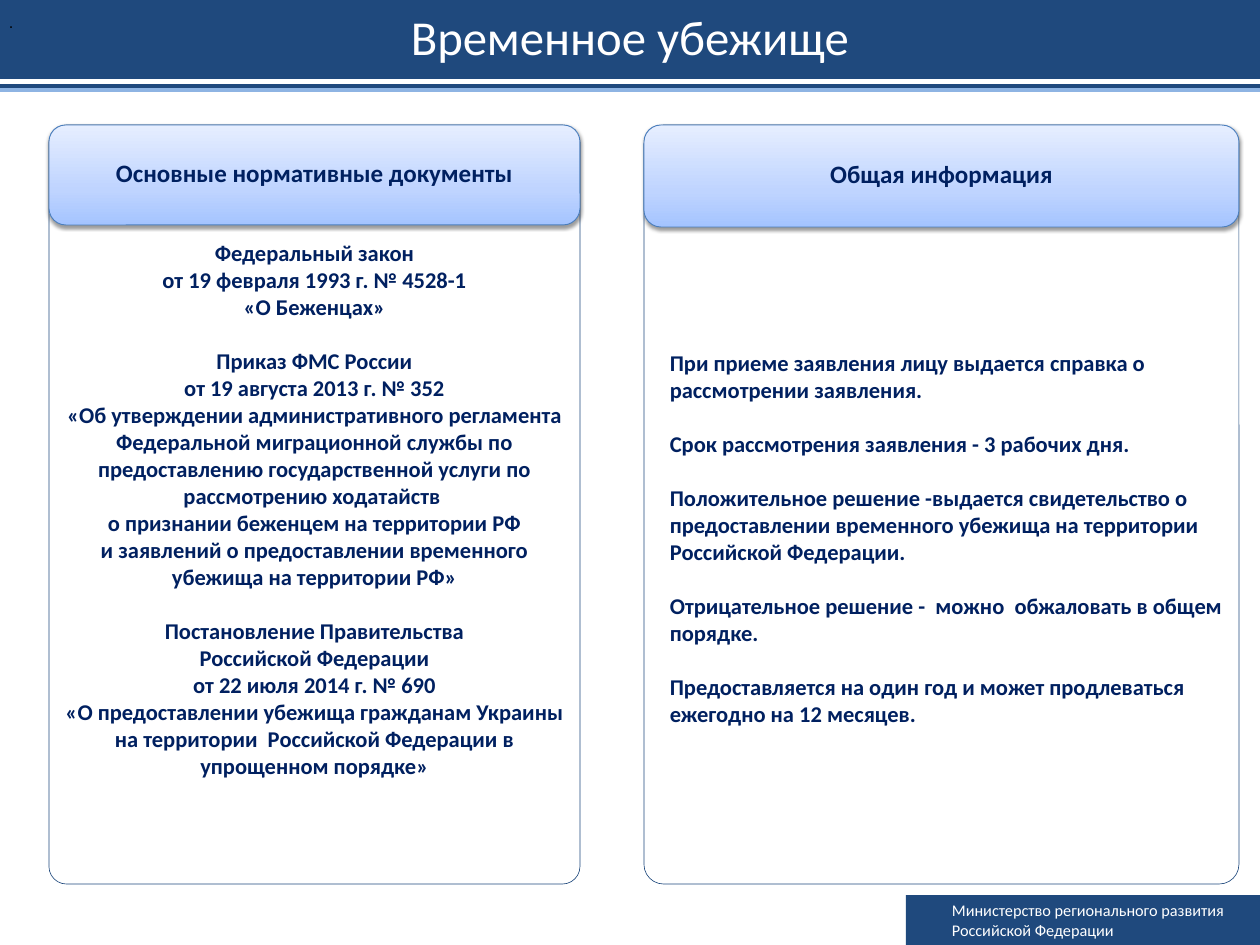
import copy

import lxml.etree
import pptx
import pptx.dml.color
import pptx.enum.shapes
import pptx.enum.text
import pptx.oxml
import pptx.oxml.ns
import pptx.util

RGBColor = pptx.dml.color.RGBColor
Pt = pptx.util.Pt
SHAPE = pptx.enum.shapes.MSO_SHAPE
ALIGN = pptx.enum.text.PP_ALIGN
ANCHOR = pptx.enum.text.MSO_ANCHOR
qn = pptx.oxml.ns.qn

PX = 914400 // 90
NAVY = RGBColor(0x1F, 0x49, 0x7D)
SKY = RGBColor(0x8E, 0xB4, 0xE3)
INK = RGBColor(0x00, 0x20, 0x60)
EDGE = RGBColor(0x4B, 0x7E, 0xBC)
WHITE = RGBColor(0xFF, 0xFF, 0xFF)
BLACK = RGBColor(0x00, 0x00, 0x00)
GRADIENT = [
    (0, RGBColor(0xA4, 0xC4, 0xFF)),
    (0.35, RGBColor(0xBF, 0xD4, 0xFF)),
    (1, RGBColor(0xE6, 0xEE, 0xFF)),
]

# Each group holds the paragraphs of one document
DOCUMENTS = [
    ["Федеральный закон", "от 19 февраля 1993 г. № 4528-1", "«О Беженцах»"],
    ["Приказ ФМС России", "от 19 августа 2013 г. № 352",
     "«Об утверждении административного регламента Федеральной миграционной "
     "службы по предоставлению государственной услуги по рассмотрению "
     "ходатайств \vо признании беженцем на территории РФ",
     "и заявлений о предоставлении временного убежища на территории РФ»"],
    ["Постановление Правительства", "Российской Федерации",
     "от 22 июля 2014 г. № 690",
     "«О предоставлении убежища гражданам Украины на территории  "
     "Российской Федерации в упрощенном порядке»"],
]
FACTS = [
    ["При приеме заявления лицу выдается справка о рассмотрении заявления."],
    ["Срок рассмотрения заявления - 3 рабочих дня."],
    ["Положительное решение -выдается свидетельство о предоставлении "
     "временного убежища на территории Российской Федерации."],
    ["Отрицательное решение -  можно  обжаловать в общем порядке."],
    ["Предоставляется на один год и может продлеваться ежегодно на 12 месяцев."],
]


def px(*lengths):
    return [length * PX for length in lengths]


def add_box(page, kind, place, fill=None, line=None, width=0.5, corner=None):
    box = page.shapes.add_shape(kind, *px(*place))
    box.shadow.inherit = False
    if corner is not None:
        box.adjustments[0] = corner
    if fill is None:
        box.fill.background()
    else:
        box.fill.solid()
        box.fill.fore_color.rgb = fill
    if line is None:
        box.line.fill.background()
    else:
        box.line.color.rgb = line
        box.line.width = Pt(width)
    return box


def add_rule(page, left, right, y, color):
    rule = page.shapes.add_connector(
        pptx.enum.shapes.MSO_CONNECTOR.STRAIGHT, *px(left, y, right, y))
    rule.line.color.rgb = color
    rule.line.width = Pt(3)
    lxml.etree.SubElement(rule._element.spPr, qn("a:effectLst"))


def write(box, groups, size, color, bold=False, align=ALIGN.LEFT,
          anchor=ANCHOR.MIDDLE, margins=(9, 4, 9, 4), spacing=None,
          font="Calibri", wrap=True):
    """Write groups of paragraphs, one empty line's height apart."""
    frame = box.text_frame
    frame.word_wrap = wrap
    frame.vertical_anchor = anchor
    (frame.margin_left, frame.margin_top,
     frame.margin_right, frame.margin_bottom) = px(*margins)
    frame.text = "\n".join(text for group in groups for text in group)
    paragraphs = iter(frame.paragraphs)
    for number, group in enumerate(groups):
        for place in range(len(group)):
            para = next(paragraphs)
            para.alignment = align
            if number and place == 0:
                para.space_before = Pt(size * 1.2)
            if spacing:
                para.line_spacing = Pt(spacing)
            for span in para.runs:
                span.font.name = font
                span.font.size = Pt(size)
                span.font.bold = bold
                span.font.color.rgb = color


def shade(box):
    """Give a heading its vertical gradient and soft shadow."""
    box.fill.gradient()
    box.fill.gradient_angle = 90
    stops = box._element.spPr.find(qn("a:gradFill")).find(qn("a:gsLst"))
    stops.insert(1, copy.deepcopy(stops[0]))
    for stop, (position, color) in zip(box.fill.gradient_stops, GRADIENT):
        stop.position = position
        stop.color.rgb = color
    effects = box._element.spPr.find(qn("a:effectLst"))
    shadow = lxml.etree.SubElement(
        effects, qn("a:outerShdw"), blurRad=str(Pt(3.1)), dist=str(Pt(1.6)),
        dir="5400000", rotWithShape="0")
    tint = lxml.etree.SubElement(shadow, qn("a:srgbClr"), val="000000")
    lxml.etree.SubElement(tint, qn("a:alpha"), val="38000")


def add_panel(page, left, width, heading_height, heading):
    top = 125
    body = add_box(page, SHAPE.ROUNDED_RECTANGLE, (left, top, width, 759),
                   line=NAVY, corner=0.033)
    head = add_box(page, SHAPE.ROUNDED_RECTANGLE,
                   (left, top, width, heading_height), line=EDGE, width=0.75)
    shade(head)
    write(head, [[heading]], 20, INK, bold=True, align=ALIGN.CENTER,
          margins=(0, 4, 0, 4), spacing=19.5)
    return body


def main():
    deck = pptx.Presentation()
    deck.slide_width, deck.slide_height = px(1260, 945)
    page = deck.slides.add_slide(deck.slide_layouts[6])

    # Footer
    footer = add_box(page, SHAPE.RECTANGLE, (906, 895, 354, 50), fill=NAVY)
    write(footer, [["Министерство регионального развития\vРоссийской Федерации"]],
          13, WHITE, margins=(46, 4, 9, 4))

    # Title band and rules
    add_rule(page, 0, 1260, 86, NAVY)
    add_rule(page, -4, 1261, 90, SKY)
    title = add_box(page, SHAPE.ROUNDED_RECTANGLE, (0, 0, 1260, 79),
                    fill=NAVY, corner=0)
    write(title, [["Временное убежище"]], 39, WHITE, align=ALIGN.CENTER,
          margins=(13, 6, 13, 6), spacing=40.6)

    # Panels
    documents = add_panel(page, 49, 531, 100, "Основные нормативные документы")
    write(documents, DOCUMENTS, 18, INK, bold=True, align=ALIGN.CENTER,
          anchor=ANCHOR.TOP, margins=(9, 109, 9, 4))
    add_panel(page, 644, 595, 102, "Общая информация")

    # Small mark in the corner
    mark = page.shapes.add_textbox(*px(0, 8, 22, 29))
    write(mark, [["."]], 13, BLACK, font="Arial", wrap=False)

    # General information
    facts = page.shapes.add_textbox(*px(661, 345, 586, 418))
    write(facts, FACTS, 18, INK, bold=True, anchor=ANCHOR.TOP)

    deck.save("out.pptx")


if __name__ == "__main__":
    main()
